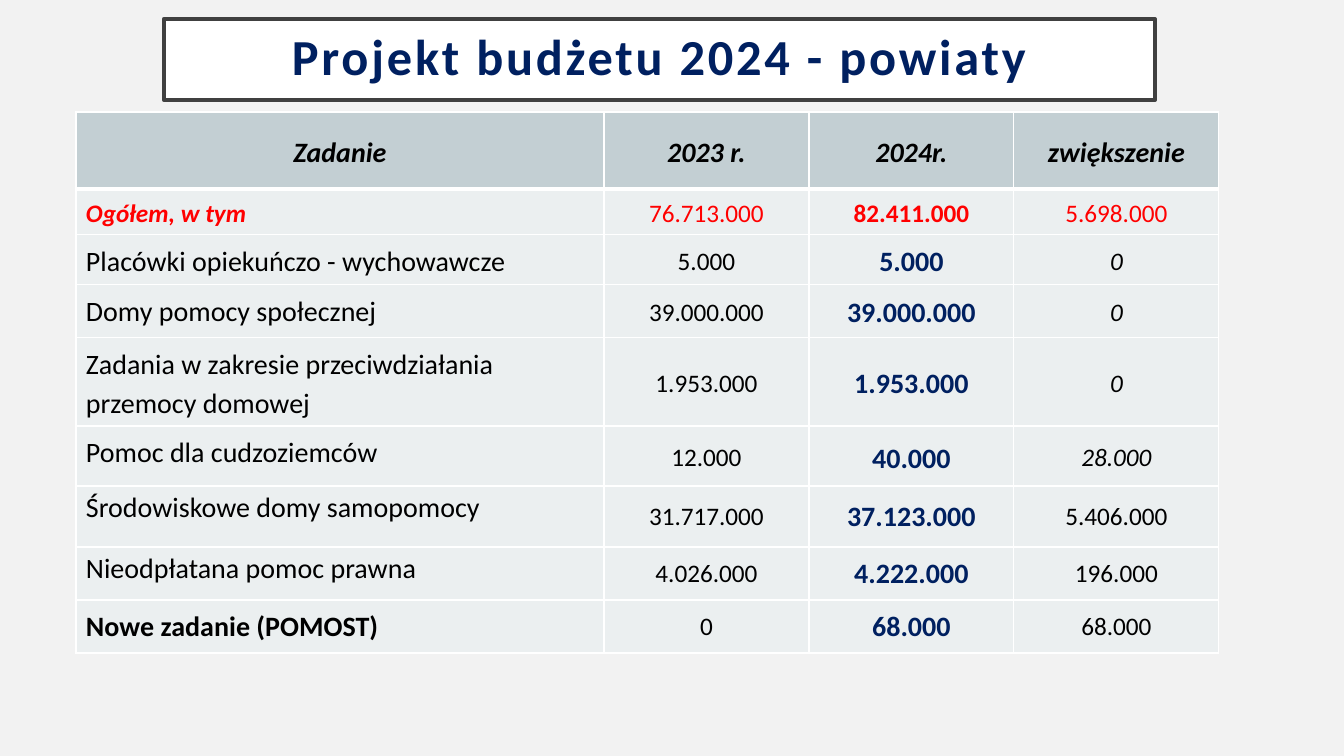
from lxml.etree import SubElement
from pptx import Presentation
from pptx.dml.color import RGBColor
from pptx.enum.shapes import MSO_SHAPE as Shape
from pptx.enum.text import MSO_ANCHOR as Anchor, PP_ALIGN as Align
from pptx.oxml.ns import qn
from pptx.util import Emu, Pt

BACKGROUND = RGBColor(0xF2, 0xF2, 0xF2)
WHITE = RGBColor(0xFF, 0xFF, 0xFF)
FRAME = RGBColor(0x40, 0x40, 0x40)
NAVY = RGBColor(0x00, 0x20, 0x60)
BLACK = RGBColor(0x00, 0x00, 0x00)
RED = RGBColor(0xFF, 0x00, 0x00)
HEAD_FILL = RGBColor(0xC3, 0xCF, 0xD3)
BODY_FILL = RGBColor(0xEB, 0xEF, 0xF0)

COLUMN_WIDTHS = (528, 205, 205, 205)
ROW_HEIGHTS = (77, 43, 50, 53, 88, 60, 61, 53, 53)
HEADER, TOTAL, ITALIC_END, HOMES, LEGAL, NEW = 0, 1, 5, 6, 7, 8
NAME, YEAR_2024, INCREASE = 0, 2, 3
BUDGET = (
    ("Zadanie", "2023 r.", "2024r.", "zwiększenie"),
    ("Ogółem, w tym", "76.713.000", "82.411.000", "5.698.000"),
    ("Placówki opiekuńczo - wychowawcze", "5.000", "5.000", "0"),
    ("Domy pomocy społecznej", "39.000.000", "39.000.000", "0"),
    ("Zadania w zakresie przeciwdziałania przemocy domowej",
     "1.953.000", "1.953.000", "0"),
    ("Pomoc dla cudzoziemców", "12.000", "40.000", "28.000"),
    ("Środowiskowe domy samopomocy", "31.717.000", "37.123.000", "5.406.000"),
    ("Nieodpłatana pomoc prawna", "4.026.000", "4.222.000", "196.000"),
    ("Nowe zadanie (POMOST)", "0", "68.000", "68.000"),
)


def px(count):
    """Turn pixels into EMU."""
    return Emu(round(count * 914400 / 100.8))


def add_span(para, text, size, color, bold, italic=False):
    """Add one run of text and return it."""
    span = para.add_run()
    span.text = text
    span.font.name = "Calibri"
    span.font.size = Pt(size)
    span.font.bold = bold
    span.font.italic = italic
    span.font.color.rgb = color
    return span


def set_margins(target, across, down):
    """Set equal side margins and equal top and bottom margins."""
    target.margin_left = target.margin_right = px(across)
    target.margin_top = target.margin_bottom = px(down)


def add_title(page, left, top, width, height):
    """Draw the framed title."""
    box = page.shapes.add_shape(Shape.RECTANGLE, px(left), px(top), px(width), px(height))
    box.shadow.inherit = False
    box.fill.solid()
    box.fill.fore_color.rgb = WHITE
    box.line.color.rgb = FRAME
    box.line.width = Pt(3)
    frame = box.text_frame
    frame.word_wrap = True
    frame.vertical_anchor = Anchor.MIDDLE
    set_margins(frame, 30, 20)
    para = frame.paragraphs[0]
    para.alignment = Align.CENTER
    para.line_spacing = 0.9
    span = add_span(para, "Projekt budżetu 2024 - powiaty", 36, NAVY, True)
    span.font._element.set("spc", "200")


def add_borders(cell, row):
    """Rule a cell in white, with a heavier line under the header."""
    properties = cell._tc.get_or_add_tcPr()
    thick = {"lnB": HEADER, "lnT": TOTAL}
    for index, side in enumerate(("lnL", "lnR", "lnT", "lnB")):
        points = 3 if thick.get(side) == row else 1
        line = properties.makeelement(qn(f"a:{side}"), {"w": str(Pt(points))})
        fill = SubElement(line, qn("a:solidFill"))
        SubElement(fill, qn("a:srgbClr"), val=str(WHITE))
        properties.insert(index, line)


def text_style(row, column):
    """Return size, colour, bold and italic for a cell."""
    if row == HEADER:
        return 20, BLACK, True, True
    if row == TOTAL:
        return 18, RED, column in (NAME, YEAR_2024), column == NAME
    if column == NAME:
        return 20, BLACK, row == NEW, False
    if column == YEAR_2024:
        return 20, NAVY, True, False
    return 18, BLACK, False, column == INCREASE and row <= ITALIC_END


def fill_cell(cell, row, column, text):
    """Fill, rule and write one cell."""
    cell.fill.solid()
    cell.fill.fore_color.rgb = HEAD_FILL if row == HEADER else BODY_FILL
    add_borders(cell, row)
    is_label = column == NAME and row != HEADER
    cell.vertical_anchor = Anchor.TOP if is_label else Anchor.MIDDLE
    tight = row == HOMES and not is_label
    set_margins(cell, 1 if tight else 10, 1 if tight else 5)
    para = cell.text_frame.paragraphs[0]
    para.alignment = Align.LEFT if is_label else Align.CENTER
    if row < HOMES or (row == NEW and is_label):
        para.line_spacing = 1.15
        para.space_after = Pt(8)
    add_span(para, text, *text_style(row, column))


def add_budget_table(page, left, top):
    """Draw the budget table from its top left corner."""
    table = page.shapes.add_table(
        len(BUDGET), len(COLUMN_WIDTHS), px(left), px(top),
        px(sum(COLUMN_WIDTHS)), px(sum(ROW_HEIGHTS))).table
    for column, width in zip(table.columns, COLUMN_WIDTHS):
        column.width = px(width)
    for row, height in zip(table.rows, ROW_HEIGHTS):
        row.height = px(height)
    for row, texts in enumerate(BUDGET):
        for column, text in enumerate(texts):
            fill_cell(table.cell(row, column), row, column, text)


def main():
    """Build and save the deck."""
    deck = Presentation()
    deck.slide_width, deck.slide_height = px(1344), px(756)
    page = deck.slides.add_slide(deck.slide_layouts[6])
    page.background.fill.solid()
    page.background.fill.fore_color.rgb = BACKGROUND
    add_title(page, 164, 19, 991, 81)
    add_budget_table(page, 76, 112)
    deck.save("out.pptx")


if __name__ == "__main__":
    main()
